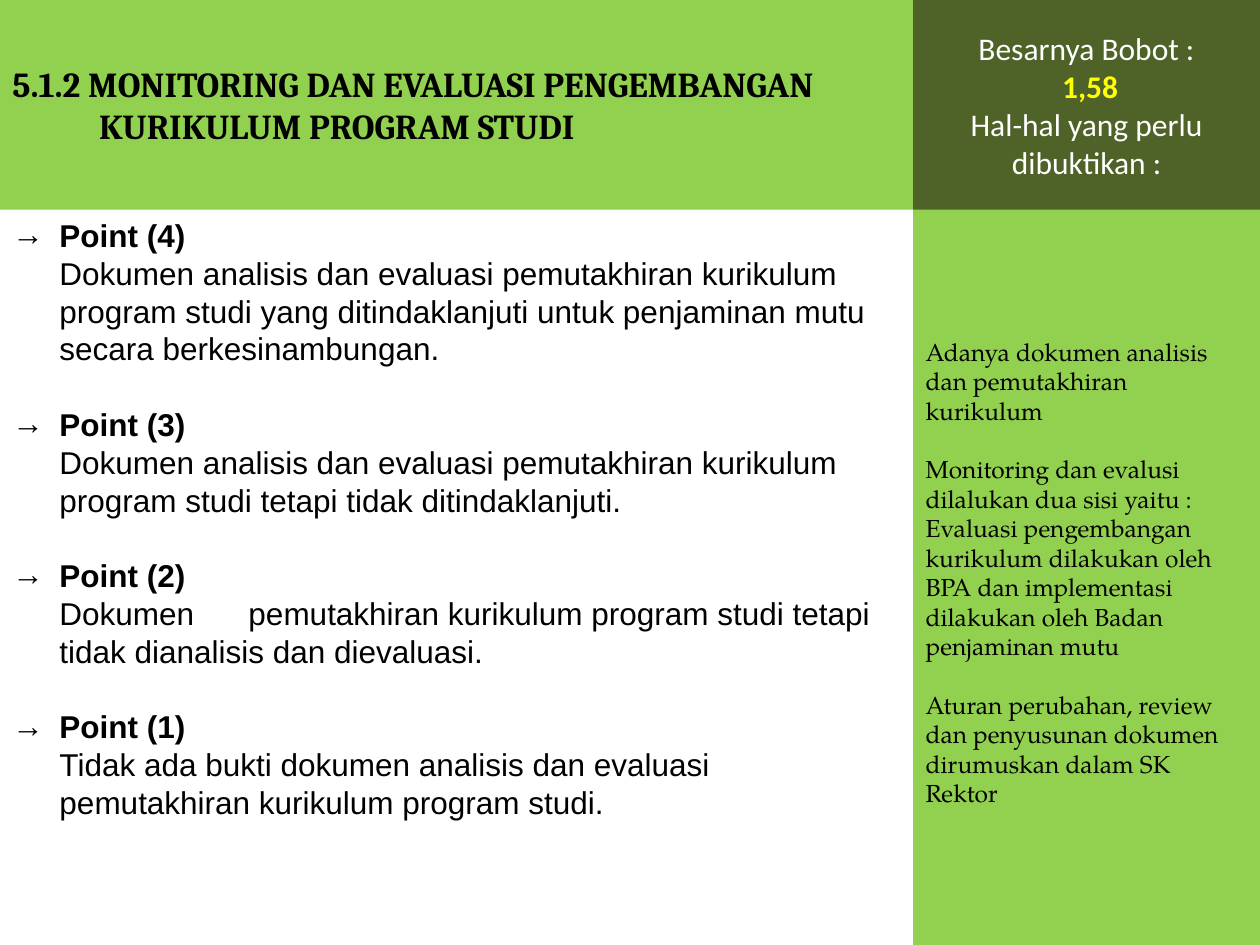
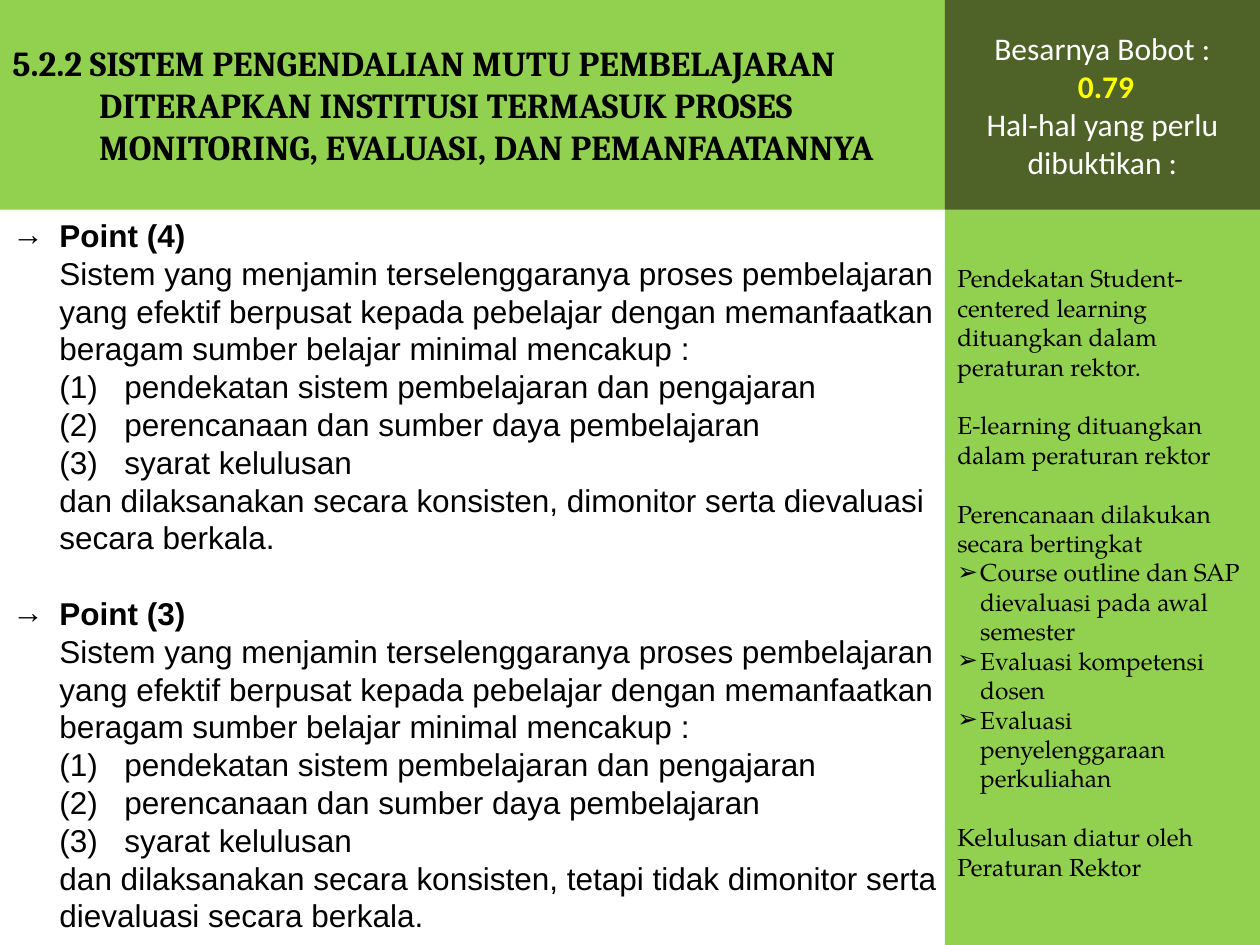
from lxml import etree
from pptx import Presentation
from pptx.dml.color import RGBColor
from pptx.enum.shapes import MSO_SHAPE
from pptx.enum.text import MSO_ANCHOR, PP_ALIGN
from pptx.oxml.ns import qn
from pptx.util import Cm, Pt

RECT = MSO_SHAPE.RECTANGLE
MIDDLE = MSO_ANCHOR.MIDDLE
LEFT, CENTER = PP_ALIGN.LEFT, PP_ALIGN.CENTER

LIME = RGBColor(0x92, 0xD0, 0x50)
OLIVE = RGBColor(0x4F, 0x62, 0x28)
YELLOW = RGBColor(0xFF, 0xFF, 0x00)
WHITE = RGBColor(0xFF, 0xFF, 0xFF)
BLACK = RGBColor(0, 0, 0)

SLIDE_W, SLIDE_H = Cm(25.4), Cm(19.05)
BAND_H = Cm(4.23)
TITLE_W = Cm(19.9)
PANEL_TOP = Cm(4.02)
POINT_INDENT = Cm(0.95)
ITEM_INDENT, ITEM_HANG = Cm(2.26), Cm(1.31)
WORD_TAB = Cm(4.2)
TITLE_INDENT = Cm(1.75)
CHECK_INDENT = Cm(0.46)
BODY_LINE = Pt(21.6)
SIDE_LINE = Pt(16.8)

SYSTEM = ("Sistem yang menjamin terselenggaranya proses pembelajaran yang efektif "
          "berpusat kepada pebelajar dengan memanfaatkan beragam sumber belajar "
          "minimal mencakup :")
ITEMS = ["pendekatan sistem pembelajaran dan pengajaran",
         "perencanaan dan sumber daya pembelajaran",
         "syarat kelulusan"]

CURRICULUM = {
    "title": "5.1.2 MONITORING DAN EVALUASI PENGEMBANGAN KURIKULUM PROGRAM STUDI",
    "weight": "1,58",
    "side_w": Cm(6.99),
    "body_w": Cm(18.42),
    "points": [
        (4, "Dokumen analisis dan evaluasi pemutakhiran kurikulum program studi yang "
            "ditindaklanjuti untuk penjaminan mutu secara berkesinambungan.", [], ""),
        (3, "Dokumen analisis dan evaluasi pemutakhiran kurikulum program studi tetapi "
            "tidak ditindaklanjuti.", [], ""),
        (2, "Dokumen\tpemutakhiran kurikulum program studi tetapi tidak dianalisis dan "
            "dievaluasi.", [], ""),
        (1, "Tidak ada bukti dokumen analisis dan evaluasi pemutakhiran kurikulum "
            "program studi.", [], ""),
    ],
    "evidence": [
        ("Adanya dokumen analisis dan pemutakhiran kurikulum", []),
        ("Monitoring dan evalusi dilalukan dua sisi yaitu : Evaluasi pengembangan "
         "kurikulum dilakukan oleh BPA dan implementasi dilakukan oleh Badan "
         "penjaminan mutu", []),
        ("Aturan perubahan, review dan penyusunan dokumen dirumuskan dalam SK Rektor", []),
    ],
}

LEARNING = {
    "title": "5.2.2 SISTEM PENGENDALIAN MUTU PEMBELAJARAN DITERAPKAN INSTITUSI "
             "TERMASUK PROSES MONITORING, EVALUASI, DAN PEMANFAATANNYA",
    "weight": "0.79",
    "side_w": Cm(6.35),
    "body_w": Cm(19.26),
    "points": [
        (4, SYSTEM, ITEMS, "dan dilaksanakan secara konsisten, dimonitor serta "
                           "dievaluasi secara berkala."),
        (3, SYSTEM, ITEMS, "dan dilaksanakan secara konsisten, tetapi tidak dimonitor "
                           "serta dievaluasi secara berkala."),
    ],
    "evidence": [
        ("Pendekatan Student-centered learning dituangkan dalam peraturan rektor.", []),
        ("E-learning dituangkan dalam peraturan rektor", []),
        ("Perencanaan dilakukan secara bertingkat",
         ["Course outline dan SAP dievaluasi pada awal semester",
          "Evaluasi kompetensi dosen",
          "Evaluasi penyelenggaraan perkuliahan"]),
        ("Kelulusan diatur oleh Peraturan Rektor", []),
    ],
}


def add_panel(s, left, top, width, height, fill):
    """Add a plain filled rectangle and return its text frame."""
    sp = s.shapes.add_shape(RECT, left, top, width, height)
    sp.shadow.inherit = False
    sp.fill.solid()
    sp.fill.fore_color.rgb = fill
    sp.line.fill.background()
    tf = sp.text_frame
    tf.word_wrap = True
    tf.vertical_anchor = MIDDLE
    return tf


def add_paragraph(tf, text, font, size, color=BLACK, bold=False, align=LEFT, gap=0):
    """Add one paragraph with one run, reusing the empty first paragraph."""
    p = tf.paragraphs[0]
    if p.runs:
        p = tf.add_paragraph()
    p.alignment = align
    p.space_before = gap
    r = p.add_run()
    r.text = text
    r.font.name = font
    r.font.size = Pt(size)
    r.font.bold = bold
    r.font.color.rgb = color
    return p


def set_indent(p, margin, hang=0, bullet=None):
    """Set the left margin, the hanging indent and the bullet character."""
    pPr = p._p.get_or_add_pPr()
    pPr.set("marL", str(int(margin)))
    pPr.set("indent", str(-int(hang)))
    if bullet:
        etree.SubElement(pPr, qn("a:buFont"), typeface="Arial")
        etree.SubElement(pPr, qn("a:buChar"), char=bullet)
    else:
        etree.SubElement(pPr, qn("a:buNone"))


def set_tab(p, position):
    """Give the paragraph one left tab stop."""
    tabs = etree.SubElement(p._p.get_or_add_pPr(), qn("a:tabLst"))
    etree.SubElement(tabs, qn("a:tab"), pos=str(int(position)), algn="l")


def add_body_line(tf, text, margin=POINT_INDENT, hang=0, bullet=None, bold=False, gap=0):
    """Add one paragraph of the scoring text."""
    p = add_paragraph(tf, text, "Arial", 18, bold=bold, gap=gap)
    p.line_spacing = BODY_LINE
    set_indent(p, margin, hang, bullet)
    return p


def add_points(s, width, points):
    """Add the list of scoring points with their numbered items."""
    sp = s.shapes.add_textbox(0, BAND_H, width, SLIDE_H - BAND_H)
    tf = sp.text_frame
    tf.word_wrap = True
    for i, (score, text, items, ending) in enumerate(points):
        add_body_line(tf, f"Point ({score})", hang=POINT_INDENT, bullet="→",
                      bold=True, gap=BODY_LINE if i else 0)
        p = add_body_line(tf, text)
        if "\t" in text:
            set_tab(p, WORD_TAB)
        for number, item in enumerate(items, 1):
            add_body_line(tf, f"({number})\t{item}", ITEM_INDENT, ITEM_HANG)
        if ending:
            add_body_line(tf, ending)


def add_title(s, title):
    """Add the title band with a hanging section number."""
    tf = add_panel(s, 0, 0, TITLE_W, BAND_H, LIME)
    p = add_paragraph(tf, title, "Cambria", 20, bold=True)
    set_indent(p, TITLE_INDENT, TITLE_INDENT)


def add_evidence(s, width, evidence):
    """Add the side panel that lists the evidence."""
    tf = add_panel(s, SLIDE_W - width, PANEL_TOP, width, SLIDE_H - PANEL_TOP, LIME)
    for i, (text, checks) in enumerate(evidence):
        add_paragraph(tf, text, "TeX Gyre Pagella", 14, gap=SIDE_LINE if i else 0)
        for check in checks:
            p = add_paragraph(tf, check, "TeX Gyre Pagella", 14)
            set_indent(p, CHECK_INDENT, CHECK_INDENT, "➢")


def add_weight(s, width, weight):
    """Add the dark corner that states the weight."""
    tf = add_panel(s, SLIDE_W - width, 0, width, BAND_H, OLIVE)
    for text, color in (("Besarnya Bobot :", WHITE), (f" {weight}", YELLOW),
                        ("Hal-hal yang perlu dibuktikan :", WHITE)):
        add_paragraph(tf, text, "Calibri", 18, color, color == YELLOW, CENTER)


def add_criterion(prs, criterion):
    """Build one criterion slide."""
    s = prs.slides.add_slide(prs.slide_layouts[6])
    add_points(s, criterion["body_w"], criterion["points"])
    add_title(s, criterion["title"])
    add_evidence(s, criterion["side_w"], criterion["evidence"])
    add_weight(s, criterion["side_w"], criterion["weight"])


def main():
    """Build and save the presentation."""
    prs = Presentation()
    prs.slide_width, prs.slide_height = SLIDE_W, SLIDE_H
    for criterion in (CURRICULUM, LEARNING):
        add_criterion(prs, criterion)
    prs.save("out.pptx")


if __name__ == "__main__":
    main()
